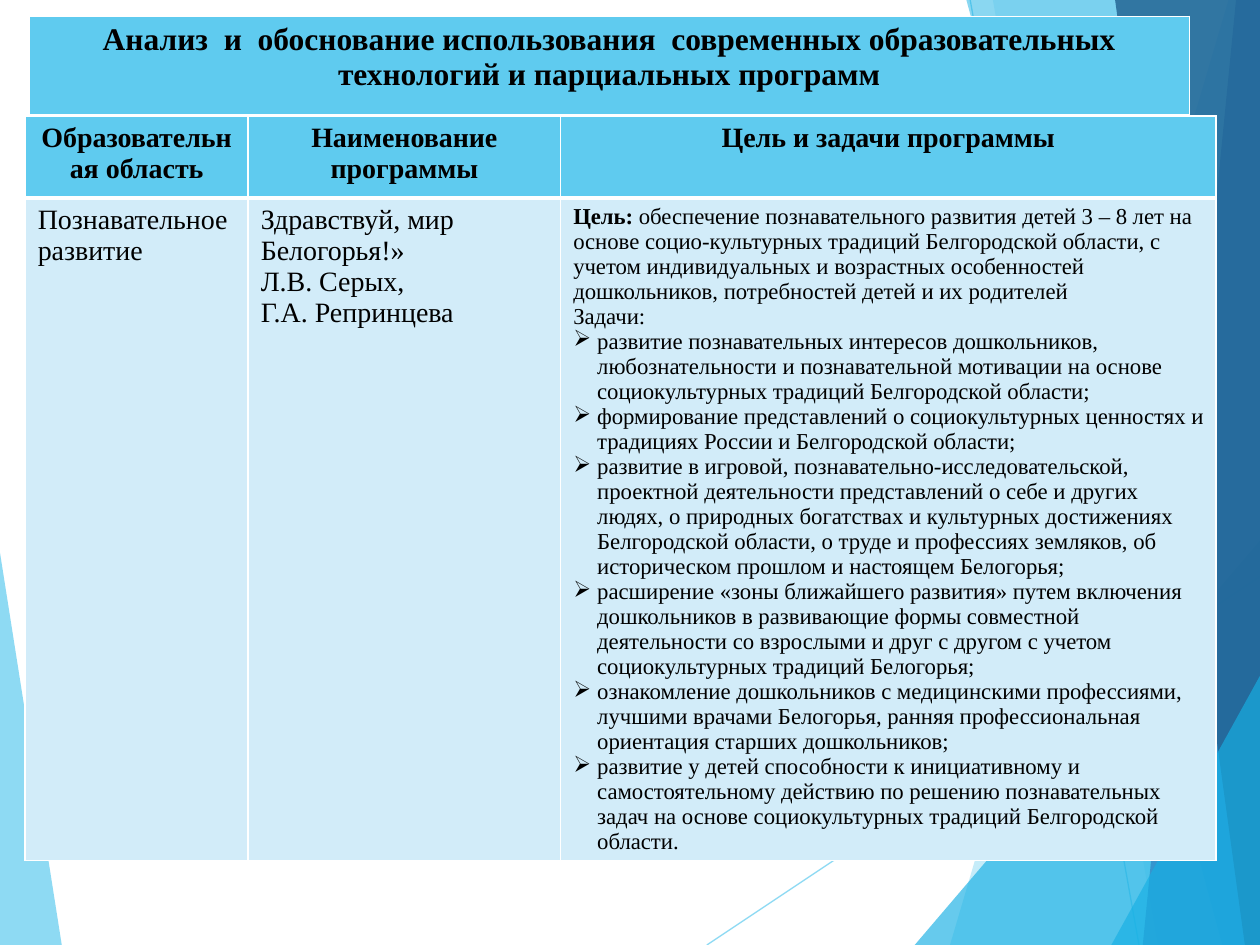
from dataclasses import dataclass

from lxml import etree
from pptx import Presentation
from pptx.dml.color import RGBColor
from pptx.enum.shapes import MSO_CONNECTOR
from pptx.enum.text import PP_ALIGN
from pptx.oxml.ns import qn
from pptx.util import Inches, Pt

STRAIGHT = MSO_CONNECTOR.STRAIGHT
CENTER = PP_ALIGN.CENTER
LEFT = PP_ALIGN.LEFT


@dataclass(frozen=True)
class Theme:
    font: str = "Times New Roman"
    ink: str = "000000"
    white: str = "FFFFFF"
    sky: str = "5FCBEF"
    pale: str = "D2ECF9"
    azure: str = "17B0E4"
    blue: str = "2E83C3"
    navy: str = "226292"
    title: int = 18
    label: int = 16
    detail: int = 13
    thin: float = 0.75
    border: int = 1
    heavy: int = 3


@dataclass(frozen=True)
class Box:
    left: int
    top: int
    width: int
    height: int

    def point(self, across, down):
        return (int(self.left + self.width * across / 100),
                int(self.top + self.height * down / 100))

    def inner(self, left, top, width, height):
        return Box(*self.point(left, top),
                   int(self.width * width / 100), int(self.height * height / 100))


THEME = Theme()

FACETS = [
    ([(0, 58.5), (4.9, 100), (0, 100)], THEME.sky, 70),
    ([(97.5, 0), (75.4, 100), (100, 100), (100, 0)], THEME.sky, 36),
    ([(78.8, 0), (91.9, 100), (100, 100), (100, 0)], THEME.sky, 20),
    ([(72.6, 100), (100, 57.2), (100, 100)], THEME.azure, 66),
    ([(76.7, 0), (97, 100), (100, 100), (100, 0)], THEME.azure, 50),
    ([(98.1, 0), (90.7, 100), (100, 100), (100, 0)], THEME.blue, 70),
    ([(88.5, 0), (98.8, 100), (100, 100), (100, 0)], THEME.navy, 82),
    ([(88.2, 100), (100, 71.5), (100, 100)], THEME.azure, 66),
]
RAYS = [((56.1, 100), (100, 61)), ((77, 0), (90.4, 100))]

TITLE = "Анализ  и  обоснование использования  современных образовательных технологий и парциальных программ"
HEADINGS = ["Образовательная область", "Наименование программы", "Цель и задачи программы"]
AREA = ["Познавательное развитие"]
PROGRAM = ["Здравствуй, мир Белогорья!»", "Л.В. Серых,", "Г.А. Репринцева"]
GOAL_LABEL = "Цель: "
GOAL = "обеспечение познавательного развития детей 3 – 8 лет на основе социо-культурных традиций Белгородской области, с учетом индивидуальных и возрастных особенностей дошкольников, потребностей детей и их родителей"
TASKS_LABEL = "Задачи:"
TASKS = [
    "развитие познавательных интересов дошкольников, любознательности и познавательной мотивации на основе социокультурных традиций Белгородской области;",
    "формирование представлений о социокультурных ценностях и традициях России и Белгородской области;",
    "развитие в игровой, познавательно-исследовательской, проектной деятельности представлений о себе и других людях, о природных богатствах и культурных достижениях Белгородской области, о труде и профессиях земляков, об историческом прошлом и настоящем Белогорья;",
    "расширение «зоны ближайшего развития» путем включения дошкольников в развивающие формы совместной деятельности со взрослыми и друг с другом с учетом социокультурных традиций Белогорья;",
    "ознакомление дошкольников с медицинскими профессиями, лучшими врачами Белогорья, ранняя профессиональная ориентация старших дошкольников;",
    "развитие у детей способности к инициативному и самостоятельному действию по решению познавательных задач на основе социокультурных традиций Белгородской области.",
]


def set_opacity(shape, percent):
    for color in shape._element.spPr.iter(qn("a:srgbClr")):
        etree.SubElement(color, qn("a:alpha"), val=str(percent * 1000))


def add_facet(page, box, corners, color, opacity):
    first, *others = [box.point(*corner) for corner in corners]
    builder = page.shapes.build_freeform(*first)
    builder.add_line_segments(others, close=True)
    shape = builder.convert_to_shape()
    shape.shadow.inherit = False
    shape.fill.solid()
    shape.fill.fore_color.rgb = RGBColor.from_string(color)
    shape.line.fill.background()
    set_opacity(shape, opacity)


def add_ray(page, box, start, end):
    ray = page.shapes.add_connector(STRAIGHT, *box.point(*start), *box.point(*end))
    ray.line.color.rgb = RGBColor.from_string(THEME.sky)
    ray.line.width = Pt(THEME.thin)
    set_opacity(ray, 70)
    etree.SubElement(ray._element.spPr, qn("a:effectLst"))


def add_backdrop(page, box):
    add_facet(page, box, *FACETS[0])
    for start, end in RAYS:
        add_ray(page, box, start, end)
    for facet in FACETS[1:]:
        add_facet(page, box, *facet)


def style_cell(cell, color, bottom):
    properties = cell._tc.get_or_add_tcPr()
    widths = {"L": THEME.border, "R": THEME.border, "T": THEME.border, "B": bottom}
    for side, width in widths.items():
        line = etree.SubElement(properties, qn(f"a:ln{side}"), w=str(Pt(width)))
        fill = etree.SubElement(line, qn("a:solidFill"))
        etree.SubElement(fill, qn("a:srgbClr"), val=THEME.white)
    cell.fill.solid()
    cell.fill.fore_color.rgb = RGBColor.from_string(color)


def add_bullet(para):
    properties = para._p.get_or_add_pPr()
    indent = Inches(0.19)
    for name, value in {"marL": indent, "indent": -indent}.items():
        properties.set(name, str(value))
    etree.SubElement(properties, qn("a:buChar"), char="➢")


def write_cell(cell, paragraphs, size, align=LEFT, bullets_from=None):
    frame = cell.text_frame
    for index, spans in enumerate(paragraphs):
        para = frame.add_paragraph() if index else frame.paragraphs[0]
        para.alignment = align
        if bullets_from is not None and index >= bullets_from:
            add_bullet(para)
        for text, bold in spans:
            span = para.add_run()
            span.text = text
            for name, value in {"name": THEME.font, "size": Pt(size), "bold": bold}.items():
                setattr(span.font, name, value)
            span.font.color.rgb = RGBColor.from_string(THEME.ink)


def add_grid(page, box, columns, rows):
    grid = page.shapes.add_table(
        len(rows), len(columns), box.left, box.top, box.width, box.height).table
    grid.horz_banding = False
    for column, share in zip(grid.columns, columns):
        column.width = int(box.width * share / sum(columns))
    for row, share in zip(grid.rows, rows):
        row.height = int(box.height * share / sum(rows))
    return grid


def add_title(page, box):
    cell = add_grid(page, box, [1], [1]).cell(0, 0)
    style_cell(cell, THEME.sky, THEME.heavy)
    write_cell(cell, [[(TITLE, True)]], THEME.title, CENTER)


def add_programs(page, box):
    grid = add_grid(page, box, [177, 248, 520], [65, 525])
    for column, heading in enumerate(HEADINGS):
        header, body = grid.cell(0, column), grid.cell(1, column)
        style_cell(header, THEME.sky, THEME.heavy)
        style_cell(body, THEME.pale, THEME.border)
        write_cell(header, [[(heading, True)]], THEME.label, CENTER)
    for column, lines in enumerate([AREA, PROGRAM]):
        write_cell(grid.cell(1, column), [[(line, False)] for line in lines], THEME.label)
    goals = [[(GOAL_LABEL, True), (GOAL, False)]]
    goals += [[(line, False)] for line in [TASKS_LABEL, *TASKS]]
    write_cell(grid.cell(1, 2), goals, THEME.detail, bullets_from=2)


def main():
    deck = Presentation()
    deck.slide_width, deck.slide_height = Inches(10), Inches(7.5)
    page = deck.slides.add_slide(deck.slide_layouts[6])
    box = Box(0, 0, deck.slide_width, deck.slide_height)
    add_backdrop(page, box)
    add_title(page, box.inner(2.3, 1.73, 92.1, 10.53))
    add_programs(page, box.inner(2, 12.27, 94.5, 78.67))
    deck.save("out.pptx")


if __name__ == "__main__":
    main()
